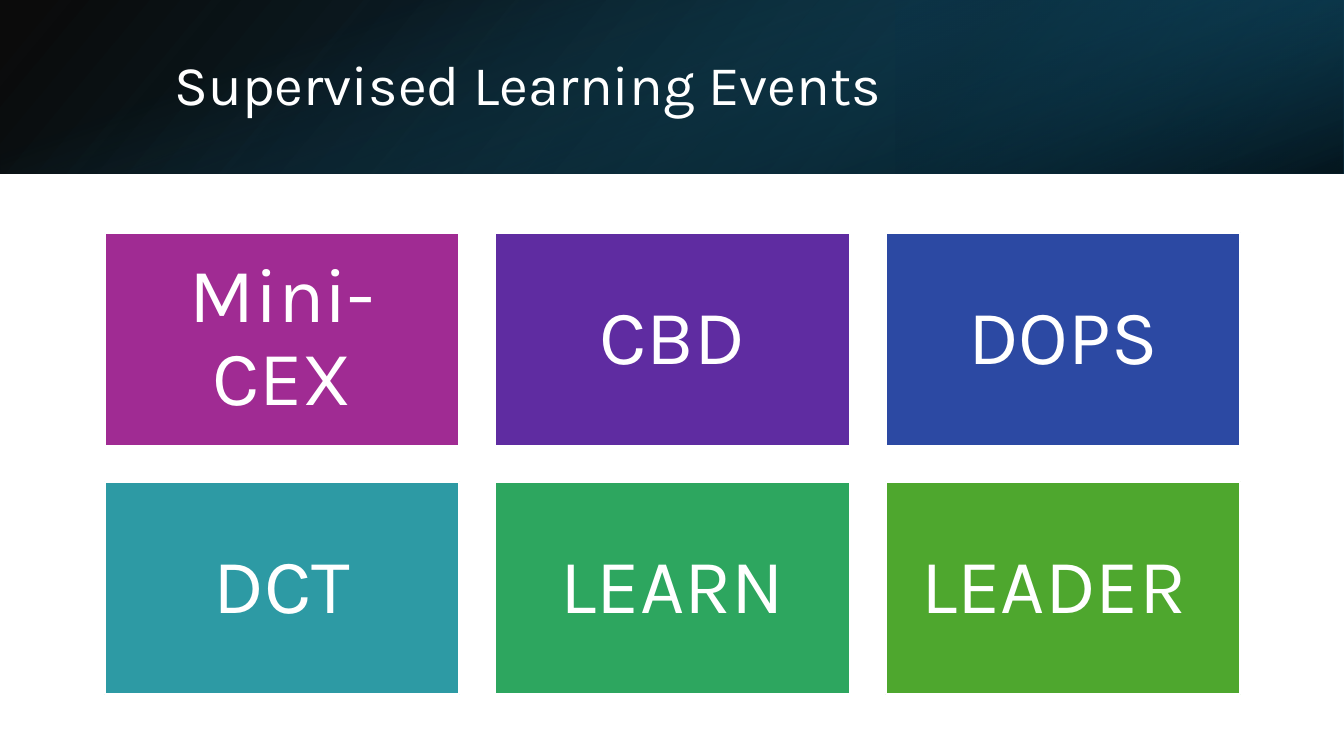
from lxml import etree
from pptx import Presentation
from pptx.dml.color import RGBColor
from pptx.enum.shapes import MSO_SHAPE
from pptx.enum.text import MSO_ANCHOR, MSO_AUTO_SIZE, PP_ALIGN
from pptx.oxml.ns import qn
from pptx.util import Cm, Pt

RECT = MSO_SHAPE.RECTANGLE
MIDDLE = MSO_ANCHOR.MIDDLE
LEFT, CENTER = PP_ALIGN.LEFT, PP_ALIGN.CENTER
NO_FIT = MSO_AUTO_SIZE.NONE
WIDE, HIGH, BAND = 33.87, 19.05, 4.37
COLORS = {
    "white": "FFFFFF", "black": "000000", "navy": "104862",
    "deep": "0B3041", "teal": "156082", "plum": "A02B93",
    "violet": "5F2CA1", "blue": "2C49A3", "cyan": "2D9AA4",
    "green": "2DA65F", "lime": "4EA72E",
}
EVENTS = [
    ("Mini-CEX", "plum"), ("CBD", "violet"), ("DOPS", "blue"),
    ("DCT", "cyan"), ("LEARN", "green"), ("LEADER ", "lime"),
]


class Deck:
    """Holds the style and the current slide, and adds elements to it."""

    def __init__(self, font):
        self.font = font
        self.show = Presentation()
        self.show.slide_width, self.show.slide_height = Cm(WIDE), Cm(HIGH)
        self.slide = self.show.slides.add_slide(self.show.slide_layouts[5])

    def color(self, name):
        return RGBColor.from_string(COLORS[name])

    def rect(self, left, top, width, height):
        shape = self.slide.shapes.add_shape(
            RECT, Cm(left), Cm(top), Cm(width), Cm(height))
        shape.shadow.inherit = False
        return shape

    def label(self, shape, text, size, align):
        frame = shape.text_frame
        frame.word_wrap = True
        frame.auto_size = NO_FIT
        frame.vertical_anchor = MIDDLE
        para = frame.paragraphs[0]
        para.alignment = align
        para.line_spacing = 0.9
        run = para.add_run()
        run.text = text
        run.font.name = self.font
        run.font.size = Pt(size)
        run.font.color.rgb = self.color("white")

    def band(self, left, top, width, height, angle, stops, turn=0, flip=False):
        shape = self.rect(left, top, width, height)
        shape.rotation = turn
        shape.line.fill.background()
        shape.fill.gradient()
        shape.fill.gradient_angle = 360 - angle
        props = shape._element.spPr
        if flip:
            props.find(qn("a:xfrm")).set("flipH", "1")
        for stop, (place, name, _) in zip(shape.fill.gradient_stops, stops):
            stop.position = place / 100
            stop.color.rgb = self.color(name)
        for tint, (_, _, solid) in zip(props.iter(qn("a:srgbClr")), stops):
            alpha = etree.SubElement(tint, qn("a:alpha"))
            alpha.set("val", str(solid * 1000))

    def title(self, text, left, top, width, height):
        shape = self.slide.shapes.title
        shape.left, shape.top = Cm(left), Cm(top)
        shape.width, shape.height = Cm(width), Cm(height)
        self.label(shape, text, 40, LEFT)
        self.slide.shapes._spTree.append(shape._element)

    def tile(self, text, name, left, top, width, height):
        shape = self.rect(left, top, width, height)
        shape.fill.solid()
        shape.fill.fore_color.rgb = self.color(name)
        shape.line.color.rgb = self.color("white")
        shape.line.width = Pt(1.5)
        frame = shape.text_frame
        frame.margin_left = frame.margin_right = Cm(0.58)
        frame.margin_top = frame.margin_bottom = Cm(0.58)
        self.label(shape, text, 55, CENTER)


def main():
    deck = Deck("Karla")
    deck.band(0, 0, WIDE, BAND, 140,
              [(0, "black", 96), (100, "navy", 100)], flip=True)
    deck.band(22.58, 0, 11.29, BAND, 320,
              [(19, "deep", 68), (100, "teal", 79)], turn=180, flip=True)
    side = (WIDE - BAND) / 2
    deck.band(side, -side, BAND, WIDE, 340,
              [(23, "teal", 0), (99, "black", 74)], turn=90)
    deck.title(" Supervised Learning Events", 3.81, 0.97, 27.89, 2.44)
    for index, (text, name) in enumerate(EVENTS):
        row, col = divmod(index, 3)
        deck.tile(text, name, 2.64 + col * 9.84, 5.87 + row * 6.27, 8.94, 5.36)
    deck.show.save("out.pptx")


if __name__ == "__main__":
    main()
